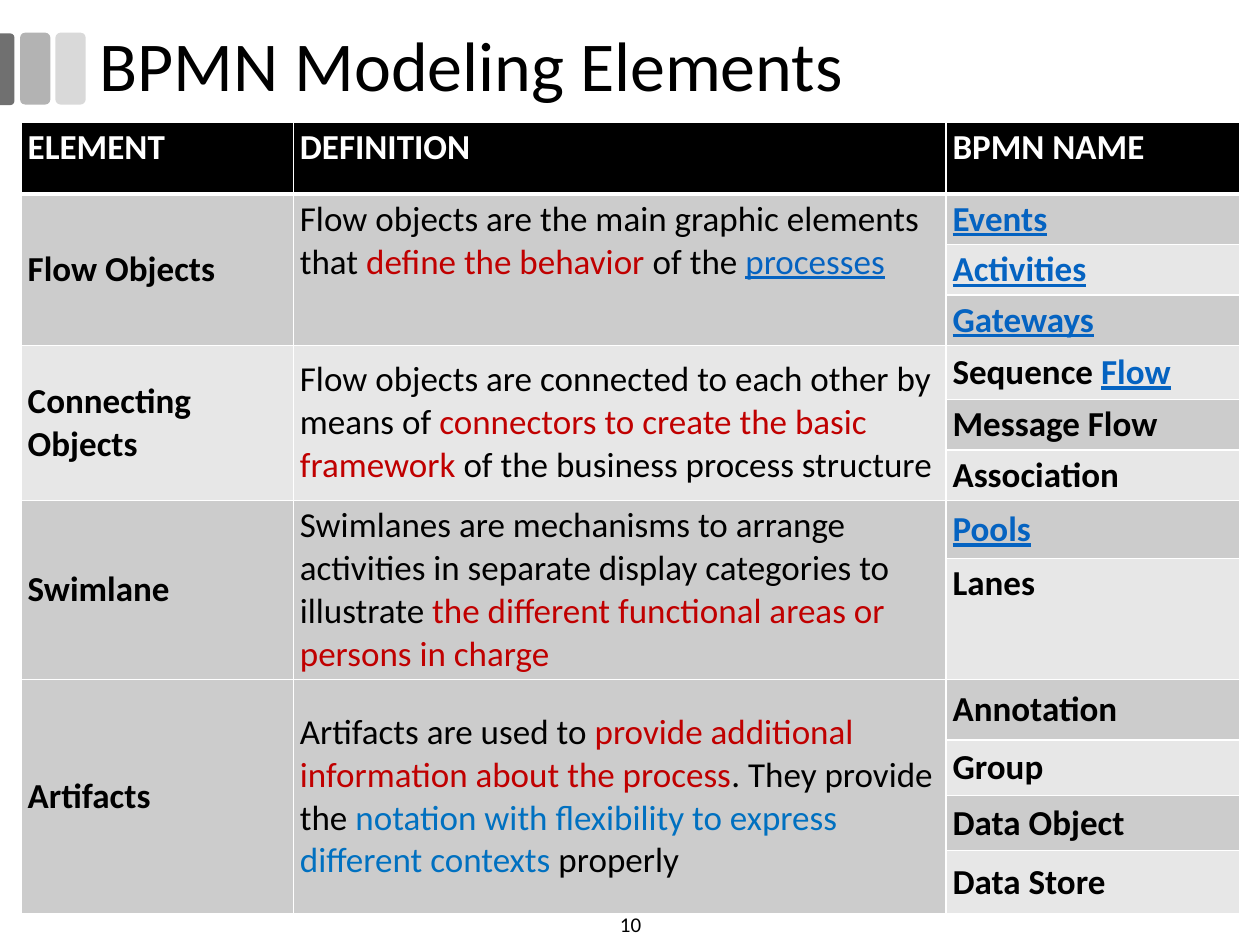
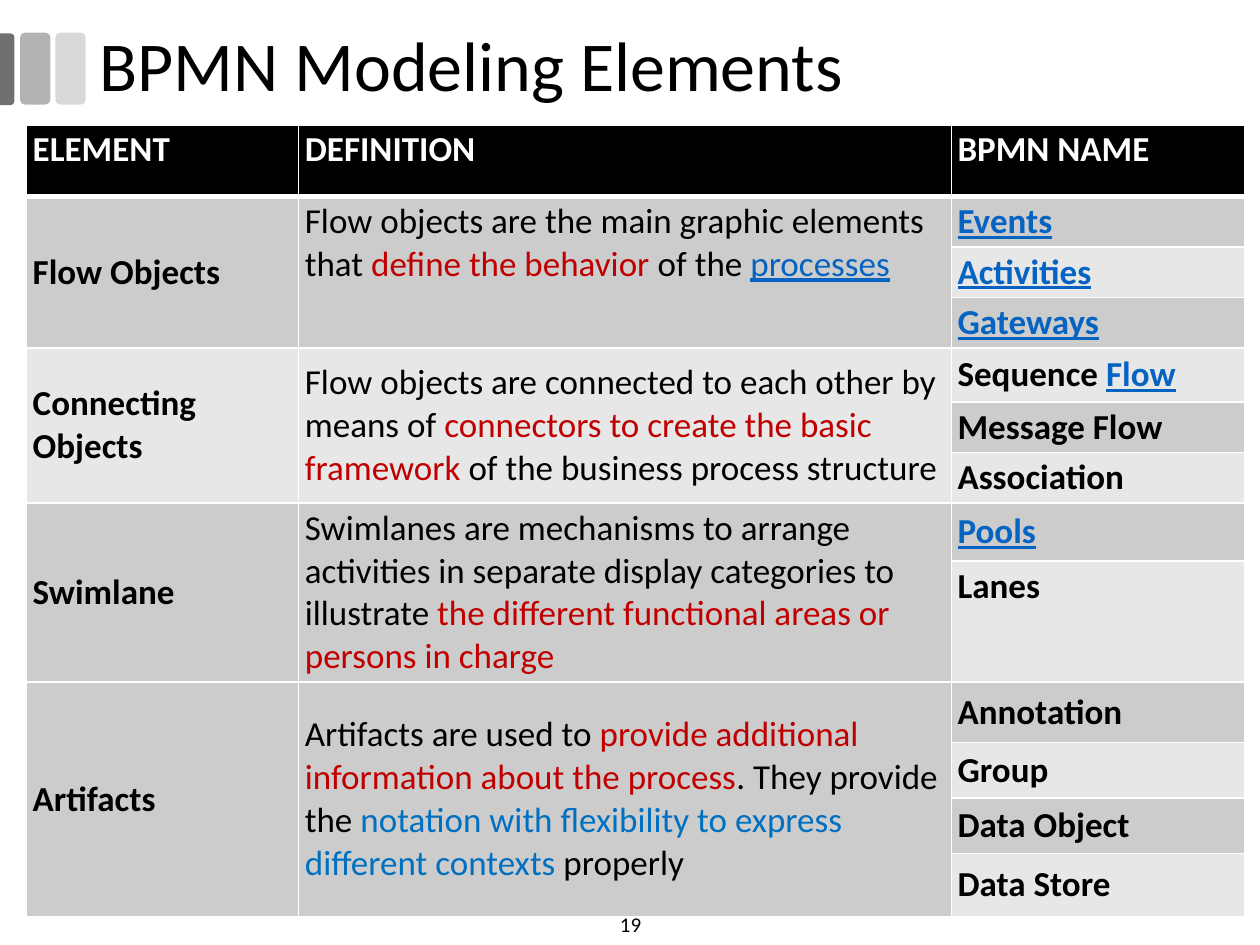
import pptx
import pptx.util
import pptx.dml.color
import pptx.enum.shapes
import pptx.enum.text
import pptx.oxml
import pptx.oxml.ns

PX = 9144  # one px is a hundredth of an inch
FONT = "Calibri"
HUES = {
    "ink": "000000", "paper": "FFFFFF", "red": "C00000", "blue": "0070C0",
    "link": "0563C1", "odd": "CCCCCC", "even": "E7E7E7",
    "light": "D9D9D9", "mid": "B3B3B3", "dark": "707070",
}
KIND = pptx.enum.shapes.MSO_SHAPE
ANCHOR = pptx.enum.text.MSO_ANCHOR
ALIGN = pptx.enum.text.PP_ALIGN

TITLE = "BPMN Modeling Elements"
HEADS = ["ELEMENT", "DEFINITION", "BPMN NAME"]
COLS = [216, 518, 233]
ROWS = [57, 39, 39, 39, 43, 40, 40, 46, 88, 48, 44, 44, 50]
TOPS = {"Lanes"}  # names set at the top of their cell

# Each group: element, anchor of the definition, definition runs, names.
# A run is plain text, or a pair of text and hue.
GROUPS = [
    ("Flow Objects", ANCHOR.TOP,
     ["Flow objects are the main graphic elements that ",
      ("define the behavior ", "red"), "of the ", ("processes", "link")],
     [[("Events", "link")], [("Activities", "link")], [("Gateways", "link")]]),
    ("Connecting Objects", ANCHOR.MIDDLE,
     ["Flow objects are connected to each other by means of ",
      ("connectors to create the basic framework ", "red"),
      "of the business process structure"],
     [["Sequence ", ("Flow", "link")], ["Message Flow"], ["Association"]]),
    ("Swimlane", ANCHOR.MIDDLE,
     ["Swimlanes are mechanisms to arrange activities in separate display "
      "categories to illustrate ",
      ("the different functional areas or persons in charge", "red")],
     [[("Pools", "link")], ["Lanes"]]),
    ("Artifacts", ANCHOR.MIDDLE,
     ["Artifacts are used to ",
      ("provide additional information about the process", "red"),
      ". They provide the ",
      ("notation with flexibility to express different contexts ", "blue"),
      "properly"],
     [["Annotation"], ["Group"], ["Data Object"], ["Data Store"]]),
]

# Page number, left and top of the table
PAGES = [("10", 17, 97), ("19", 21, 99)]


def emu(*px):
    return [pptx.util.Emu(n * PX) for n in px]


def rgb(hue):
    return pptx.dml.color.RGBColor.from_string(HUES[hue])


def put(item, **vals):
    for name, val in vals.items():
        setattr(item, name, val)


def write(para, runs, size, hue="ink", bold=False):
    for part in runs:
        text, tint = (part, hue) if isinstance(part, str) else part
        run = para.add_run()
        run.text = text
        put(run.font, name=FONT, size=pptx.util.Pt(size), bold=bold)
        run.font.color.rgb = rgb(tint)
        if tint == "link":
            run.font.underline = True


def add_bars(slide, left, top):
    """Three grey tabs at the left edge; the first is a turned half tab."""
    bars = [
        (KIND.ROUNDED_RECTANGLE, (67, 0, 24, 57), "light", 0),
        (KIND.ROUNDED_RECTANGLE, (39, 0, 24, 57), "mid", 0),
        (KIND.ROUND_2_SAME_RECTANGLE, (0, 23, 57, 12), "dark", 90),
    ]
    for kind, (x, y, wide, high), hue, turn in bars:
        bar = slide.shapes.add_shape(kind, *emu(left + x, top + y, wide, high))
        bar.shadow.inherit = False
        bar.fill.solid()
        bar.fill.fore_color.rgb = rgb(hue)
        bar.line.fill.background()
        bar.rotation = turn
        if turn:
            bar.adjustments[0] = 0.29


def add_title(slide, box):
    left, top, wide, high = emu(*box)
    put(slide.shapes.title, left=left, top=top, width=wide, height=high)
    frame = slide.shapes.title.text_frame
    put(frame, vertical_anchor=ANCHOR.MIDDLE, word_wrap=True,
        auto_size=pptx.enum.text.MSO_AUTO_SIZE.NONE)
    para = frame.paragraphs[0]
    put(para, alignment=ALIGN.LEFT, line_spacing=0.9)
    write(para, [TITLE], 40)


def add_page(slide, box, label):
    frame = slide.shapes.add_textbox(*emu(*box)).text_frame
    put(frame, word_wrap=True, vertical_anchor=ANCHOR.MIDDLE)
    frame.paragraphs[0].alignment = ALIGN.CENTER
    write(frame.paragraphs[0], [label], 12)


def edge(cell, row):
    """White rules, thick between the header and the body."""
    thick = {"B": row == 0, "T": row == 1}
    props = cell._tc.get_or_add_tcPr()
    for spot, side in enumerate("LRTB"):
        width = pptx.util.Pt(3 if thick.get(side) else 1)
        props.insert(spot, pptx.oxml.parse_xml(
            f'<a:ln{side} {pptx.oxml.ns.nsdecls("a")} w="{width}"><a:solidFill>'
            f'<a:srgbClr val="{HUES["paper"]}"/></a:solidFill></a:ln{side}>'))


def fill_cell(cell, runs, anchor, **look):
    cell.vertical_anchor = anchor
    write(cell.text_frame.paragraphs[0], runs, 20, **look)


def add_grid(slide, left, top):
    box = emu(left, top, sum(COLS), sum(ROWS))
    grid = slide.shapes.add_table(len(ROWS), len(COLS), *box).table
    for col, wide in zip(grid.columns, emu(*COLS)):
        col.width = wide
    side, lid = emu(5, 3)
    for row, high in enumerate(emu(*ROWS)):
        grid.rows[row].height = high
        hue = "ink" if row == 0 else "odd" if row % 2 else "even"
        for cell in grid.rows[row].cells:
            put(cell, margin_left=side, margin_right=side,
                margin_top=lid, margin_bottom=lid)
            cell.fill.solid()
            cell.fill.fore_color.rgb = rgb(hue)
            edge(cell, row)

    # Header
    for col, head in enumerate(HEADS):
        fill_cell(grid.cell(0, col), [head], ANCHOR.TOP, hue="paper", bold=True)

    # Groups: the first two columns span all names of the group
    row = 1
    for element, anchor, runs, names in GROUPS:
        last = row + len(names) - 1
        for col in (0, 1):
            grid.cell(row, col).merge(grid.cell(last, col))
        fill_cell(grid.cell(row, 0), [element], ANCHOR.MIDDLE, bold=True)
        fill_cell(grid.cell(row, 1), runs, anchor)
        for spot, name in enumerate(names, row):
            place = ANCHOR.TOP if name[0] in TOPS else ANCHOR.MIDDLE
            fill_cell(grid.cell(spot, 2), name, place, bold=True)
        row = last + 1


def add_slide(deck, label, left, top):
    slide = deck.slides.add_slide(deck.slide_layouts.get_by_name("Title Only"))
    add_bars(slide, -23, 26)
    add_grid(slide, left, top)
    add_page(slide, (388, 717, 225, 33), label)
    add_title(slide, (69, 17, 930, 75))


def main():
    deck = pptx.Presentation()
    wide, high = emu(1000, 750)
    put(deck, slide_width=wide, slide_height=high)
    for page in PAGES:
        add_slide(deck, *page)
    deck.save("out.pptx")


if __name__ == "__main__":
    main()
